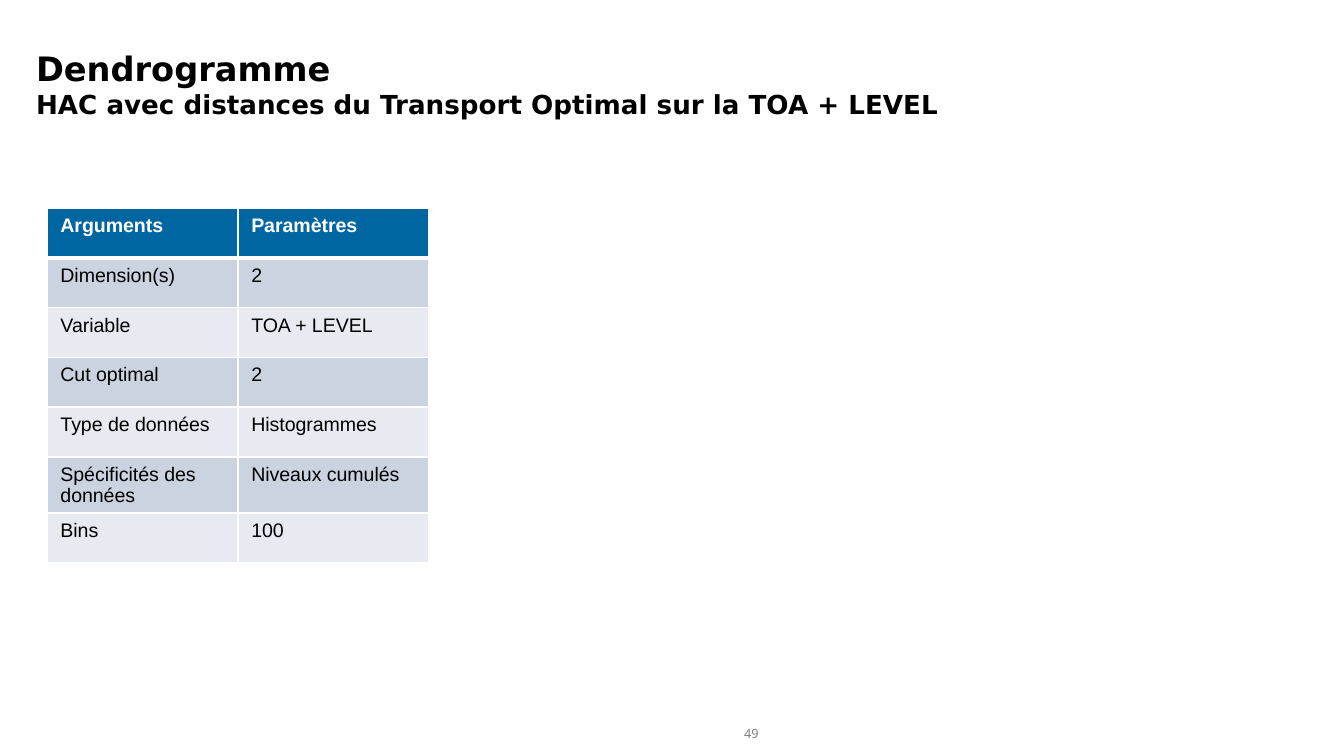
import pptx
import pptx.dml.color
import pptx.enum.text
import pptx.oxml
import pptx.oxml.ns
import pptx.util
from pptx.util import Inches

RGBColor = pptx.dml.color.RGBColor
BLACK = RGBColor(0x00, 0x00, 0x00)
WHITE = RGBColor(0xFF, 0xFF, 0xFF)
GREY = RGBColor(0x81, 0x81, 0x81)
HEADER_BLUE = RGBColor(0x00, 0x66, 0xA1)
BAND_DARK = RGBColor(0xCC, 0xD3, 0xE0)
BAND_LIGHT = RGBColor(0xE7, 0xEA, 0xF0)

TITLE = {"name": "DejaVu Sans", "size": 18, "bold": True, "color": BLACK}
SUBTITLE = {**TITLE, "size": 14}
PAGE_NUMBER = {"name": "Noto Sans", "size": 6.8, "bold": False, "color": GREY}
HEADER_CELL = {"name": "Arial", "size": 10.5, "bold": True, "color": WHITE}
BODY_CELL = {**HEADER_CELL, "bold": False, "color": BLACK}

PARAMETERS = [
    ("Arguments", "Paramètres"),
    ("Dimension(s)", "2"),
    ("Variable", "TOA + LEVEL"),
    ("Cut optimal", "2"),
    ("Type de données", "Histogrammes"),
    ("Spécificités des données", "Niveaux cumulés"),
    ("Bins", "100"),
]
SLIDE_WIDTH = 10
COLUMN_WIDTH = 1.42
ROW_HEIGHT = 0.37


def format_font(font, values):
    for key, value in values.items():
        if key == "color":
            font.color.rgb = value
        elif key == "size":
            font.size = pptx.util.Pt(value)
        else:
            setattr(font, key, value)


def add_run(paragraph, text, values):
    run = paragraph.add_run()
    run.text = text
    format_font(run.font, values)


def add_text_frame(slide, left, top, width, height, **settings):
    box = slide.shapes.add_textbox(
        Inches(left), Inches(top), Inches(width), Inches(height))
    frame = box.text_frame
    frame.word_wrap = True
    for key, value in settings.items():
        setattr(frame, key, value)
    return frame


def add_heading(slide):
    heading = add_text_frame(slide, 0.17, 0.31, 8.38, 0.62).paragraphs[0]
    add_run(heading, "Dendrogramme", TITLE)
    heading.add_line_break()
    add_run(heading, "HAC avec distances du Transport Optimal sur la TOA + LEVEL",
            SUBTITLE)


def add_page_number(slide, number):
    frame = add_text_frame(
        slide, 5.25, 5.36, 0.68, 0.2,
        vertical_anchor=pptx.enum.text.MSO_ANCHOR.MIDDLE,
        margin_left=Inches(0.08), margin_right=Inches(0.08),
        margin_top=Inches(0.04), margin_bottom=Inches(0.04))
    paragraph = frame.paragraphs[0]
    paragraph.alignment = pptx.enum.text.PP_ALIGN.CENTER
    add_run(paragraph, number, PAGE_NUMBER)


def set_borders(cell, widths):
    """Draw white cell borders; line elements must precede the fill."""
    properties = cell._tc.get_or_add_tcPr()
    for index, side in enumerate("LRTB"):
        width = pptx.util.Pt(widths.get(side, 1))
        line = pptx.oxml.parse_xml(
            f'<a:ln{side} {pptx.oxml.ns.nsdecls("a")} w="{width}">'
            f'<a:solidFill><a:srgbClr val="{WHITE}"/></a:solidFill></a:ln{side}>')
        properties.insert(index, line)


def add_parameter_table(slide):
    rows, columns = len(PARAMETERS), len(PARAMETERS[0])
    table = slide.shapes.add_table(
        rows, columns, Inches(0.35), Inches(1.55),
        Inches(columns * COLUMN_WIDTH), Inches(rows * ROW_HEIGHT)).table
    for column in table.columns:
        column.width = Inches(COLUMN_WIDTH)
    for row_index, texts in enumerate(PARAMETERS):
        table.rows[row_index].height = Inches(ROW_HEIGHT)
        is_header = row_index == 0
        band = BAND_DARK if row_index % 2 else BAND_LIGHT
        for column_index, text in enumerate(texts):
            cell = table.cell(row_index, column_index)
            cell.margin_bottom = Inches(0.02)
            cell.fill.solid()
            cell.fill.fore_color.rgb = HEADER_BLUE if is_header else band
            # The rule under the header is thicker than the others
            set_borders(cell, {"B": 3} if is_header else
                        {"T": 3} if row_index == 1 else {})
            add_run(cell.text_frame.paragraphs[0], text,
                    HEADER_CELL if is_header else BODY_CELL)


def main():
    presentation = pptx.Presentation()
    # Widescreen, 16:9
    presentation.slide_width = Inches(SLIDE_WIDTH)
    presentation.slide_height = Inches(SLIDE_WIDTH * 9 / 16)
    slide = presentation.slides.add_slide(presentation.slide_layouts[6])

    # Page number, heading and parameter table
    add_page_number(slide, "49")
    add_heading(slide)
    add_parameter_table(slide)

    presentation.save("out.pptx")


if __name__ == "__main__":
    main()
